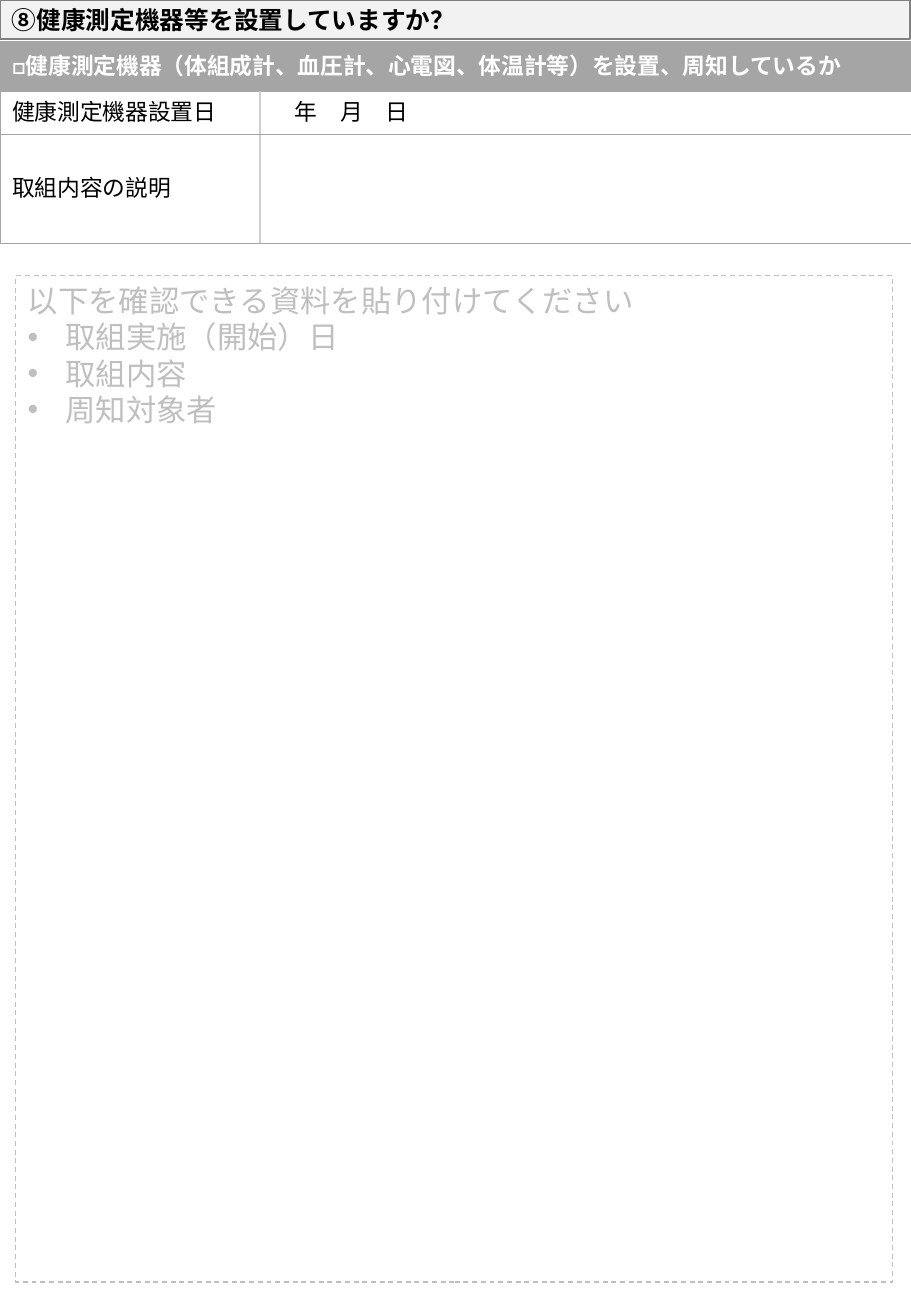
from dataclasses import dataclass

from lxml.etree import SubElement
from pptx import Presentation
from pptx.dml.color import RGBColor
from pptx.enum.dml import MSO_LINE
from pptx.enum.shapes import MSO_SHAPE
from pptx.enum.text import MSO_ANCHOR, PP_ALIGN
from pptx.oxml.ns import qn
from pptx.util import Inches, Pt

TITLE = "⑧健康測定機器等を設置していますか？"
CHECK = "□健康測定機器（体組成計、血圧計、心電図、体温計等）を設置、周知しているか"
ROWS = [
    ("健康測定機器設置日", "　年　月　日"),
    ("取組内容の説明", ""),
]
GUIDE = "以下を確認できる資料を貼り付けてください"
GUIDE_ITEMS = ["取組実施（開始）日", "取組内容", "周知対象者"]

SLIDE_W, SLIDE_H = 7.5, 10.83
TITLE_BOX = (0, 0, 7.49, 0.32)
TABLE_TOP = 0.34
COL_WIDTHS = [2.14, 5.36]
ROW_HEIGHTS = [0.41, 0.36, 0.89]
GUIDE_BOX = (0.13, 2.27, 7.22, 8.28)
BULLET_INDENT = 0.31


@dataclass(frozen=True)
class Theme:
    title_font: str = "Arial"
    body_font: str = "Calibri"
    title_size: float = 14.6
    table_size: float = 13.5
    guide_size: float = 18
    text: str = "000000"
    white: str = "FFFFFF"
    title_fill: str = "F2F2F2"
    title_line: str = "808080"
    grid: str = "A5A5A5"
    divider: str = "D0CECE"
    guide: str = "BFBFBF"


THEME = Theme()


def add_text(p, text, *, size, color=THEME.text, font=THEME.body_font, bold=False):
    p.alignment = PP_ALIGN.LEFT
    r = p.add_run()
    r.text = text
    r.font.size = Pt(size)
    r.font.bold = bold
    r.font.name = font
    r.font.color.rgb = RGBColor.from_string(color)
    SubElement(r._r.get_or_add_rPr(), qn("a:ea"), typeface=font)


def add_bullet(p):
    pPr = p._p.get_or_add_pPr()
    indent = Inches(BULLET_INDENT)
    pPr.set("marL", str(indent))
    pPr.set("indent", str(-indent))
    SubElement(pPr, qn("a:buFont"), typeface="Arial")
    SubElement(pPr, qn("a:buChar"), char="•")


def add_box(s, box, *, line, width, fill=None, anchor=MSO_ANCHOR.TOP):
    sp = s.shapes.add_shape(MSO_SHAPE.RECTANGLE, *map(Inches, box))
    sp.shadow.inherit = False
    if fill:
        sp.fill.solid()
        sp.fill.fore_color.rgb = RGBColor.from_string(fill)
    else:
        sp.fill.background()
    sp.line.color.rgb = RGBColor.from_string(line)
    sp.line.width = Pt(width)
    sp.text_frame.word_wrap = True
    sp.text_frame.vertical_anchor = anchor
    return sp


def style_cell(cell, fill, **borders):
    """Set the fill and the borders, given as L, R, T, B = (colour, points)."""
    tcPr = cell._tc.get_or_add_tcPr()
    for side in "LRTB":
        color, width = borders.get(side, (THEME.grid, 0.5))
        ln = SubElement(tcPr, qn(f"a:ln{side}"), w=str(Pt(width)))
        SubElement(SubElement(ln, qn("a:solidFill")), qn("a:srgbClr"), val=color)
    cell.fill.solid()
    cell.fill.fore_color.rgb = RGBColor.from_string(fill)
    cell.vertical_anchor = MSO_ANCHOR.MIDDLE


def add_check_table(s):
    table = s.shapes.add_table(
        len(ROW_HEIGHTS), len(COL_WIDTHS), 0, Inches(TABLE_TOP),
        Inches(sum(COL_WIDTHS)), Inches(sum(ROW_HEIGHTS))).table
    for column, width in zip(table.columns, COL_WIDTHS):
        column.width = Inches(width)
    for row, height in zip(table.rows, ROW_HEIGHTS):
        row.height = Inches(height)

    header = table.cell(0, 0)
    header.merge(table.cell(0, 1))
    for col in range(len(COL_WIDTHS)):
        style_cell(table.cell(0, col), THEME.grid)
    add_text(header.text_frame.paragraphs[0], CHECK,
             size=THEME.table_size, color=THEME.white, bold=True)

    divider = (THEME.divider, 1)
    for i, texts in enumerate(ROWS, start=1):
        for col, text in enumerate(texts):
            cell = table.cell(i, col)
            style_cell(cell, THEME.white, **{"RL"[col]: divider})
            if text:
                add_text(cell.text_frame.paragraphs[0], text, size=THEME.table_size)


def add_guide(s):
    tf = add_box(s, GUIDE_BOX, line=THEME.guide, width=0.75)
    tf.line.dash_style = MSO_LINE.DASH
    tf = tf.text_frame
    look = dict(size=THEME.guide_size, color=THEME.guide)
    add_text(tf.paragraphs[0], GUIDE, **look)
    for item in GUIDE_ITEMS:
        p = tf.add_paragraph()
        add_text(p, item, **look)
        add_bullet(p)


def main():
    prs = Presentation()
    prs.slide_width, prs.slide_height = Inches(SLIDE_W), Inches(SLIDE_H)
    s = prs.slides.add_slide(prs.slide_layouts[6])

    title = add_box(s, TITLE_BOX, line=THEME.title_line, width=1,
                    fill=THEME.title_fill, anchor=MSO_ANCHOR.MIDDLE)
    add_text(title.text_frame.paragraphs[0], TITLE, size=THEME.title_size,
             font=THEME.title_font, bold=True)
    add_check_table(s)
    add_guide(s)
    prs.save("out.pptx")


if __name__ == "__main__":
    main()
